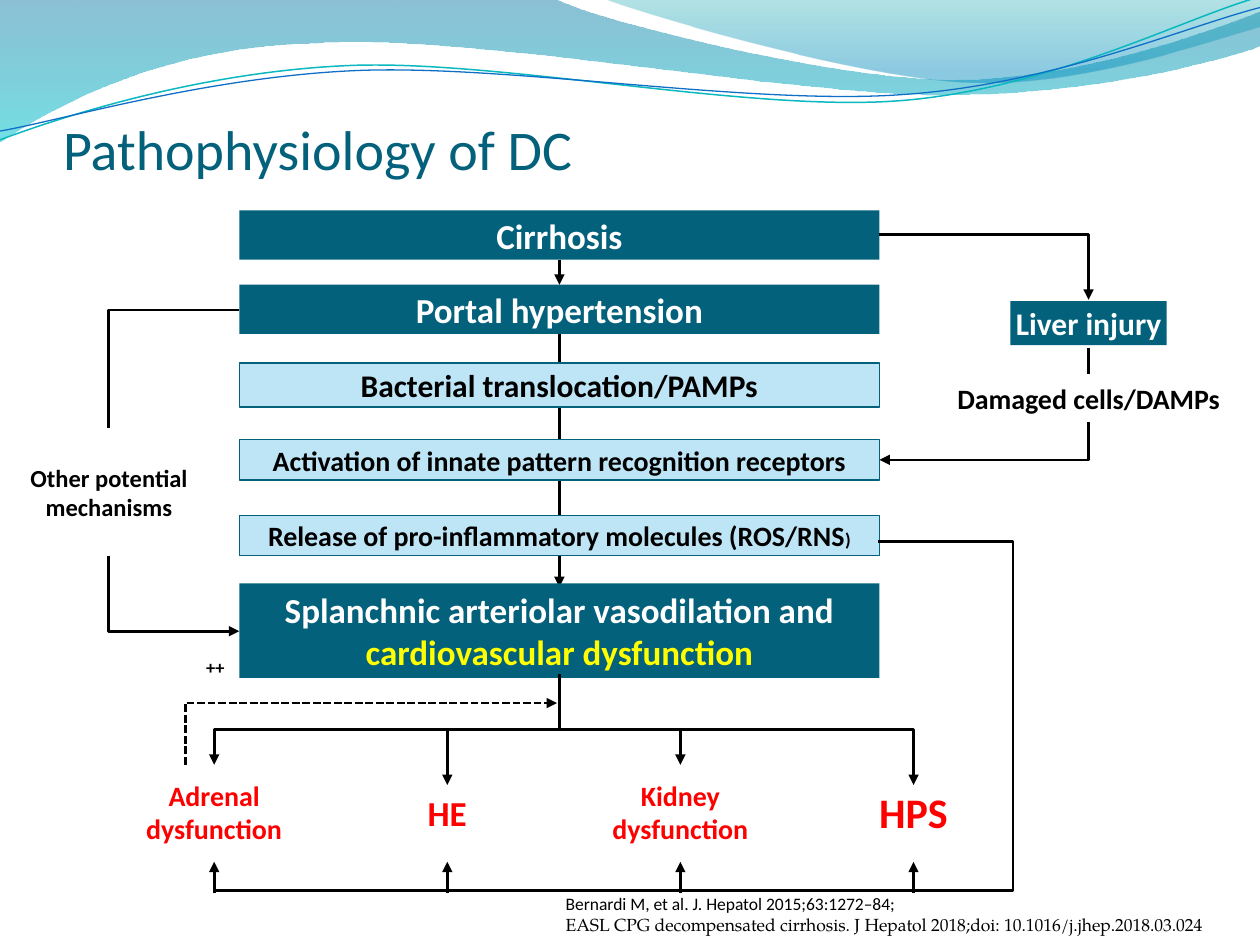
from dataclasses import dataclass
from math import cos, radians, sin
from typing import Optional

from lxml.etree import SubElement
from pptx import Presentation
from pptx.dml.color import RGBColor
from pptx.enum.dml import MSO_LINE
from pptx.enum.shapes import MSO_CONNECTOR as CONN, MSO_SHAPE as SHAPE
from pptx.enum.text import MSO_ANCHOR as ANCHOR, MSO_AUTO_SIZE as AUTO, PP_ALIGN as ALIGN
from pptx.oxml.ns import qn
from pptx.util import Pt

PX = 9144  # 100 px to the inch
FONT = "Calibri"
TEAL, PALE, WHITE, BLACK, RED, YELLOW = "04617B", "BEE5F5", "FFFFFF", "000000", "FF0000", "FFFF00"
BOTTOM, TOP = 2, 0  # connection sites of a rectangle


@dataclass
class Run:
    text: str
    size: float
    color: str = BLACK


@dataclass
class Box:
    x: int
    y: int
    w: int
    h: int
    runs: list[Run]
    fill: Optional[str] = None
    line: Optional[str] = None
    inset: int = 1
    anchor: ANCHOR = ANCHOR.MIDDLE


@dataclass
class Wave:
    points: list  # start point, then (x, y) for lines or six numbers for curves
    stops: tuple = ()  # (position, colour, opacity in percent)
    line: Optional[str] = None
    width: float = 0.75
    centre: tuple = (0, 0)
    tilt: float = 0


def rgb(value: str) -> RGBColor:
    return RGBColor.from_string(value)


def set_frame(tf, insets: tuple, anchor: ANCHOR) -> None:
    tf.word_wrap, tf.auto_size, tf.vertical_anchor = True, AUTO.NONE, anchor
    tf.margin_left, tf.margin_top, tf.margin_right, tf.margin_bottom = (i * PX for i in insets)


def style_run(r, size: float, color: str, bold: bool = False, font: str = FONT) -> None:
    r.font.name, r.font.size, r.font.bold = font, Pt(size), bold
    r.font.color.rgb = rgb(color)


def place(sp, x: int, y: int, w: int, h: int) -> None:
    sp.left, sp.top, sp.width, sp.height = x * PX, y * PX, w * PX, h * PX


def draw_box(shapes, box: Box):
    area = [v * PX for v in (box.x, box.y, box.w, box.h)]
    if box.fill:
        sp = shapes.add_shape(SHAPE.RECTANGLE, *area)
        sp.shadow.inherit = False
        sp.fill.solid()
        sp.fill.fore_color.rgb = rgb(box.fill)
        if box.line:
            sp.line.color.rgb = rgb(box.line)
            sp.line.width = Pt(0.75)
        else:
            sp.line.fill.background()
    else:
        sp = shapes.add_textbox(*area)
    set_frame(sp.text_frame, (box.inset,) * 4, box.anchor)
    p = sp.text_frame.paragraphs[0]
    p.alignment = ALIGN.CENTER
    for run in box.runs:
        r = p.add_run()
        r.text = run.text
        style_run(r, run.size, run.color, bold=True)
    return sp


def style_line(sp, arrow: bool, color: str = BLACK, width: float = 1.5, dashed: bool = False) -> None:
    sp.line.color.rgb = rgb(color)
    sp.line.width = Pt(width)
    if dashed:
        sp.line.dash_style = MSO_LINE.SQUARE_DOT
    if arrow:
        SubElement(sp.line._get_or_add_ln(), qn("a:tailEnd"), type="triangle")


def connect(shapes, kind: CONN, x1: float, y1: float, x2: float, y2: float, arrow: bool = True):
    c = shapes.add_connector(kind, *(round(v * PX) for v in (x1, y1, x2, y2)))
    style_line(c, arrow)
    SubElement(c._element.spPr, qn("a:effectLst"))
    return c


def elbow(shapes, x1: int, y1: int, x2: int, y2: int, arrow: bool = True,
          down_first: bool = False, bend_y: Optional[int] = None) -> None:
    """One-corner elbow, or two-corner elbow when bend_y is given."""
    if down_first:
        # A vertical start is a horizontal one turned about its centre
        cx, cy, dx, dy = (x1 + x2) / 2, (y1 + y2) / 2, abs(x2 - x1), y2 - y1
        side = 1 if x2 > x1 else -1
        c = connect(shapes, CONN.ELBOW, cx + side * dy / 2, cy - dx / 2,
                    cx - side * dy / 2, cy + dx / 2, arrow)
        c.rotation = 0 if not hasattr(c, "rotation") else c.rotation
        c._element.spPr.xfrm.set("rot", str((270 if side > 0 else 90) * 60000))
    else:
        c = connect(shapes, CONN.ELBOW, x1, y1, x2, y2, arrow)
    geom = c._element.spPr.find(qn("a:prstGeom"))
    if bend_y is None:
        geom.set("prst", "bentConnector2")
    else:
        share = round((bend_y - y1) / (y2 - y1) * 100000)
        SubElement(geom.find(qn("a:avLst")), qn("a:gd"), name="adj1", fmla=f"val {share}")


def outline(shapes, points: list, close: bool = False):
    pts = [(round(x * PX), round(y * PX)) for x, y in points]
    builder = shapes.build_freeform(*pts[0], scale=1.0)
    builder.add_line_segments(pts[1:], close=close)
    sp = builder.convert_to_shape()
    sp.shadow.inherit = False
    sp.fill.background()
    return sp


def turned(point: tuple, centre: tuple, degrees: float) -> tuple:
    a, dx, dy = radians(degrees), point[0] - centre[0], point[1] - centre[1]
    return centre[0] + dx * cos(a) - dy * sin(a), centre[1] + dx * sin(a) + dy * cos(a)


def draw_wave(shapes, wave: Wave) -> None:
    points = [seg[i:i + 2] for seg in wave.points for i in range(0, len(seg), 2)]
    sp = outline(shapes, [turned(pt, wave.centre, -wave.tilt) for pt in points], bool(wave.stops))
    sp.rotation = wave.tilt
    # Gather the three points of each curve into one Bezier segment
    lines = iter(list(sp._element.iter(qn("a:lnTo"))))
    for seg in wave.points[1:]:
        first = next(lines)
        if len(seg) == 6:
            first.tag = qn("a:cubicBezTo")
            for extra in (next(lines), next(lines)):
                first.append(extra[0])
                extra.getparent().remove(extra)
    if wave.line:
        style_line(sp, False, wave.line, wave.width)
        return
    sp.line.fill.background()
    sp.fill.gradient()
    sp.fill.gradient_angle = 270
    for stop, (pos, color, opacity) in zip(sp.fill.gradient_stops, wave.stops):
        stop.position = pos
        stop.color.rgb = rgb(color)
        SubElement(stop._gs.find(qn("a:srgbClr")), qn("a:alpha"), val=str(opacity * 1000))


WAVES = [
    Wave([(0, 0), (440, -1), (476, 17, 664, 63, 758, 63), (853, 63, 958, 26, 1000, 9), (1001, 36),
          (983, 44, 870, 76, 746, 75), (622, 75, 382, 28, 257, 34), (129, 36, 46, 83, -1, 113)],
         stops=((0, "0074A1", 45), (1, "00C6CF", 55))),
    Wave([(479, -1), (509, 11, 682, 62, 769, 65), (856, 69, 961, 32, 1000, 21), (1000, 0)],
         stops=((0, "00A1A9", 30), (0.8, "008BBF", 45))),
    Wave([(0, 111), (48, 93, 158, 57, 277, 52), (395, 47, 593, 89, 713, 80),
          (833, 71, 938, 15, 998, -2)], line="0AB8BF", width=0.85, centre=(499, 57.5), tilt=357.3),
    Wave([(0, 104), (47, 96, 164, 61, 283, 56), (403, 51, 597, 84, 717, 75),
          (836, 67, 941, 21, 1000, 6)], line="0F6FC6", centre=(499.5, 59), tilt=357.3),
]
STEP_X, STEP_W, MID_X = 190, 508, 444
OUTCOMES = [("Adrenal dysfunction", 16, 63, 607), ("HE", 20, 43, 623),
            ("Kidney dysfunction", 16, 63, 607), ("HPS", 24, 49, 623)]  # text, size, height, arrow end


def step(y: int, h: int, *runs: Run, pale: bool = False) -> Box:
    return Box(STEP_X, y, STEP_W, h, list(runs), PALE if pale else TEAL, TEAL if pale else None)


def main() -> None:
    prs = Presentation()
    prs.slide_width, prs.slide_height = 1000 * PX, 750 * PX
    s = prs.slides.add_slide(prs.slide_layouts[1])
    shapes = s.shapes
    for wave in WAVES:
        draw_wave(shapes, wave)

    # Title
    title = shapes.title
    place(title, 50, 77, 900, 67)
    set_frame(title.text_frame, (0, 5, 0, 0), ANCHOR.BOTTOM)
    title.text_frame.text = "Pathophysiology of DC"
    p = title.text_frame.paragraphs[0]
    p.alignment = ALIGN.LEFT
    style_run(p.runs[0], 32, TEAL)

    # References
    body = s.placeholders[1]
    place(body, 433, 709, 550, 41)
    set_frame(body.text_frame, (16, 8, 16, 8), ANCHOR.BOTTOM)
    p = body.text_frame.paragraphs[0]
    p.text = ("Bernardi M, et al. J. Hepatol 2015;63:1272–84;\v"
              "EASL CPG decompensated cirrhosis. J Hepatol 2018;doi: 10.1016/j.jhep.2018.03.024")
    p.space_before = Pt(0)
    p_pr = p._p.get_or_add_pPr()
    p_pr.set("marL", "0")
    p_pr.set("indent", "0")
    SubElement(p_pr, qn("a:buNone"))
    for r, font in zip(p.runs, (FONT, "TeX Gyre Pagella")):
        style_run(r, 10, BLACK, font=font)

    # Main cascade: the long arrow runs behind the boxes
    spine = connect(shapes, CONN.STRAIGHT, MID_X, 265, MID_X, 466)
    cirrhosis, portal, *_ = [draw_box(shapes, box) for box in (
        step(167, 39, Run("Cirrhosis", 20, WHITE)),
        step(226, 39, Run("Portal hypertension", 20, WHITE)),
        step(288, 35, Run("Bacterial translocation/PAMPs", 18), pale=True),
        step(349, 32, Run("Activation of innate pattern recognition receptors", 16), pale=True),
        step(409, 32, Run("Release of pro-inflammatory molecules (ROS/RNS", 16), Run(")", 10.5), pale=True),
        step(463, 75, Run("Splanchnic arteriolar vasodilation and ", 20, WHITE),
             Run("cardiovascular dysfunction", 20, YELLOW)),
    )]
    spine.begin_connect(portal, BOTTOM)
    link = connect(shapes, CONN.STRAIGHT, MID_X, 206, MID_X, 226)
    link.begin_connect(cirrhosis, BOTTOM)
    link.end_connect(portal, TOP)

    # Liver injury branch
    draw_box(shapes, Box(802, 239, 124, 35, [Run("Liver injury", 18, WHITE)], TEAL))
    draw_box(shapes, Box(745, 300, 238, 32, [Run("Damaged cells/DAMPs", 16)], WHITE))
    elbow(shapes, 698, 186, 864, 238)
    connect(shapes, CONN.STRAIGHT, 864, 276, 864, 297, arrow=False)
    elbow(shapes, 864, 335, 698, 365, down_first=True)

    # Other mechanisms branch
    draw_box(shapes, Box(17, 364, 139, 53, [Run("Other potential mechanisms", 14)], WHITE))
    elbow(shapes, 190, 246, 86, 340, arrow=False)
    elbow(shapes, 86, 441, 190, 501, down_first=True)

    # Organ outcomes, fed from above and below
    for i, (text, size, h, arrow_y) in enumerate(OUTCOMES):
        x = 170 + 185 * i
        draw_box(shapes, Box(x - 62, 644 - h // 2, 124, h, [Run(text, size, RED)], inset=3))
        elbow(shapes, MID_X, 535, x, arrow_y, down_first=True, bend_y=579)
        connect(shapes, CONN.STRAIGHT, x, 709, x, 684)
    style_line(outline(shapes, [(697, 430), (804, 430), (804, 707), (169, 707)]), arrow=False)

    # Adrenal feedback loop
    style_line(outline(shapes, [(147, 607), (147, 558), (442, 558)]), arrow=True, dashed=True)
    draw_box(shapes, Box(151, 518, 40, 43, [Run("++", 10.5)], inset=3, anchor=ANCHOR.TOP))

    prs.save("out.pptx")


if __name__ == "__main__":
    main()
